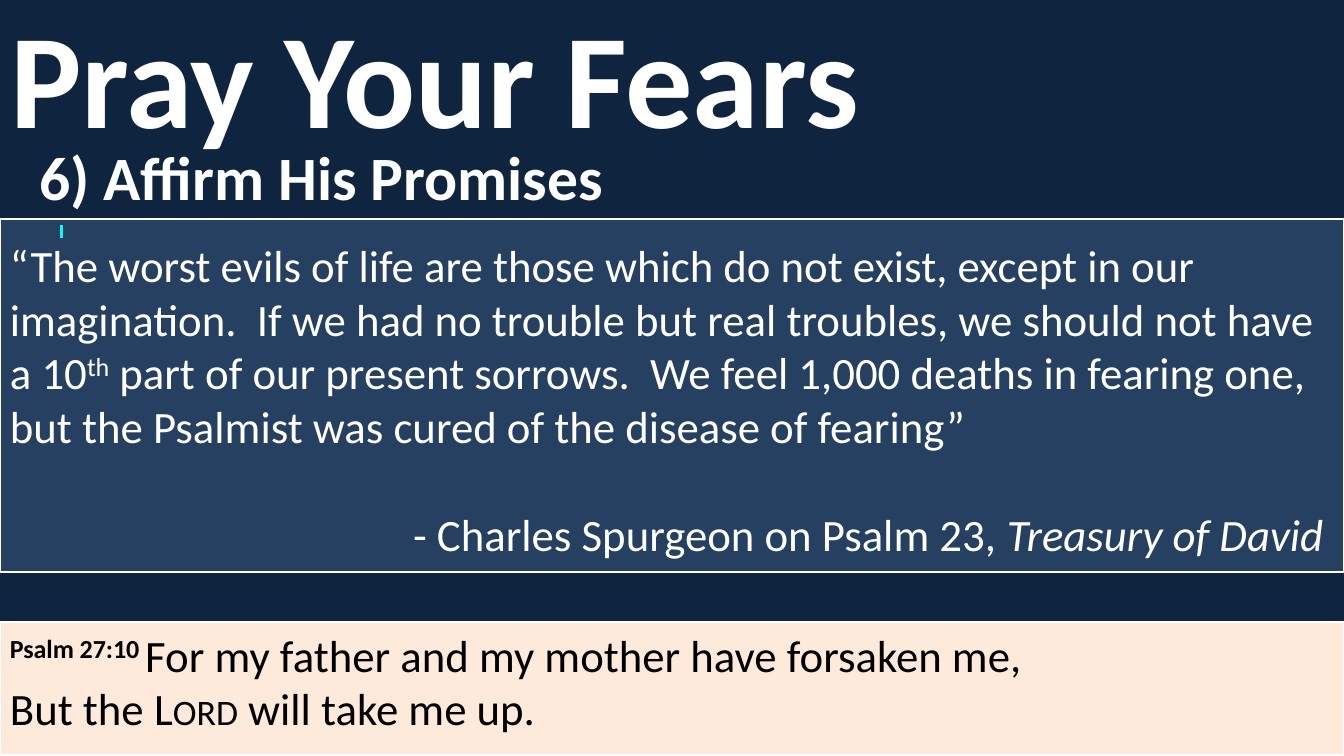
from lxml.etree import SubElement
from pptx import Presentation
from pptx.dml.color import RGBColor
from pptx.enum.shapes import MSO_SHAPE
from pptx.enum.text import MSO_ANCHOR, MSO_AUTO_SIZE, PP_ALIGN
from pptx.oxml.ns import qn
from pptx.util import Pt

WIDTH, HEIGHT = 960, 540
FONT = "Calibri"
WHITE, BLACK = "FFFFFF", "000000"
NAVY, BLUE, PEACH, CYAN = "0F243E", "254061", "FDEADA", "00FFFF"


def color(hex_code):
    return RGBColor.from_string(hex_code)


def style(run, size, ink, bold=False, italic=False):
    run.font.name = FONT
    run.font.size = Pt(size)
    run.font.bold = bold
    run.font.italic = italic
    run.font.color.rgb = color(ink)


def add_styled(paragraph, text, size, ink, **emphasis):
    run = paragraph.add_run()
    run.text = text
    style(run, size, ink, **emphasis)
    return run


def raise_text(run):
    run.font._element.set("baseline", "30000")


def highlight(run, hex_code):
    """Mark a run whose colour is already set."""
    properties = run.font._element
    mark = SubElement(properties, qn("a:highlight"))
    SubElement(mark, qn("a:srgbClr")).set("val", hex_code)
    properties.find(qn("a:solidFill")).addnext(mark)


def add_band(slide, left, top, width, height, fill):
    """Add an outlined panel and return its text frame."""
    band = slide.shapes.add_shape(
        MSO_SHAPE.RECTANGLE, Pt(left), Pt(top), Pt(width), Pt(height))
    band.shadow.inherit = False
    band.fill.solid()
    band.fill.fore_color.rgb = color(fill)
    band.line.color.rgb = color(WHITE)
    band.line.width = Pt(1.5)
    frame = band.text_frame
    frame.word_wrap = True
    frame.vertical_anchor = MSO_ANCHOR.TOP
    frame.paragraphs[0].alignment = PP_ALIGN.LEFT
    return frame


def add_heading(slide, left, top, width, height):
    title = slide.shapes.title
    title.left, title.top = Pt(left), Pt(top)
    title.width, title.height = Pt(width), Pt(height)
    frame = title.text_frame
    frame.text = "Pray Your Fears"
    frame.auto_size = MSO_AUTO_SIZE.NONE
    frame.vertical_anchor = MSO_ANCHOR.MIDDLE
    frame.paragraphs[0].alignment = PP_ALIGN.LEFT
    style(frame.paragraphs[0].runs[0], 96, WHITE, bold=True)

    point = slide.shapes.add_textbox(
        Pt(left + 21), Pt(top + 96.5), Pt(507), Pt(60.5))
    point.text_frame.word_wrap = True
    point.text_frame.text = "6) Affirm His Promises"
    style(point.text_frame.paragraphs[0].runs[0], 44, WHITE, bold=True)


def add_quote(slide, left, top, width, height):
    frame = add_band(slide, left, top, width, height, BLUE)
    marker = frame.paragraphs[0]
    marker._p.get_or_add_pPr().set("indent", str(Pt(36)))
    highlight(add_styled(marker, "\u00a0", 8, BLACK), CYAN)

    quote = frame.add_paragraph()
    quote.alignment = PP_ALIGN.LEFT
    add_styled(quote, "“The worst evils of life are those which do not exist, "
               "except in our imagination.  If we had no trouble but real "
               "troubles, we should not have a 10", 32, WHITE)
    raise_text(add_styled(quote, "th", 32, WHITE))
    add_styled(quote, " part of our present sorrows.  We feel 1,000 deaths in "
               "fearing one, but the Psalmist was cured of the disease of "
               "fearing”", 32, WHITE)

    attribution = frame.add_paragraph()
    attribution.alignment = PP_ALIGN.LEFT
    attribution.space_before = Pt(39)
    attribution._p.get_or_add_pPr().set("marL", str(Pt(288)))
    add_styled(attribution, "- Charles Spurgeon on Psalm 23, ", 32, WHITE)
    add_styled(attribution, "Treasury of David", 32, WHITE, italic=True)


def add_scripture(slide, left, top, width, height):
    verse = add_band(slide, left, top, width, height, PEACH).paragraphs[0]
    raise_text(add_styled(verse, "Psalm 27:10 ", 32, BLACK, bold=True))
    add_styled(verse, "For my father and my mother have forsaken me,", 32, BLACK)
    verse.add_line_break()
    add_styled(verse, "But the ", 32, BLACK)
    lord = add_styled(verse, "Lord", 32, BLACK)
    lord.font._element.set("cap", "small")
    add_styled(verse, " will take me up.", 32, BLACK)


def main():
    deck = Presentation()
    deck.slide_width, deck.slide_height = Pt(WIDTH), Pt(HEIGHT)
    slide = deck.slides.add_slide(deck.slide_layouts[5])
    slide.background.fill.solid()
    slide.background.fill.fore_color.rgb = color(NAVY)
    add_heading(slide, 0, -0.7, WIDTH, 108.7)
    add_quote(slide, 0, 156.5, WIDTH, 252)
    add_scripture(slide, 0, 444.5, WIDTH, 95)
    deck.save("out.pptx")


if __name__ == "__main__":
    main()
